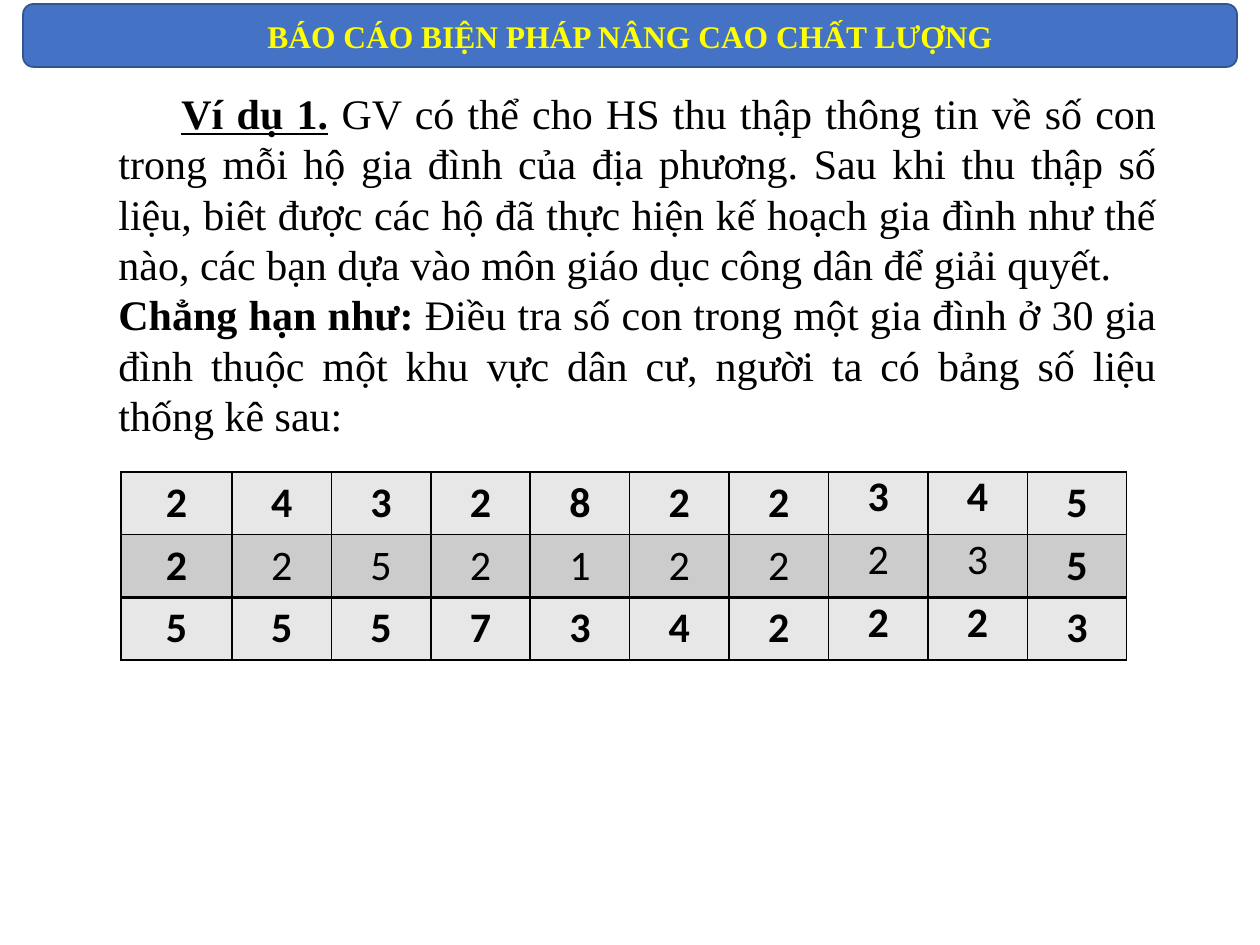
import pptx
import pptx.util
import pptx.dml.color
import pptx.enum.shapes
import pptx.enum.text
import pptx.oxml

theme = {
    "blue": "4472C4", "edge": "325491", "gold": "FFFF00", "ink": "000000",
    "light": "E7E7E7", "dark": "CCCCCC",
    "serif": "Times New Roman", "sans": "Calibri",
    "head": 18, "body": 24,
}
color = pptx.dml.color.RGBColor.from_string
align = pptx.enum.text.PP_ALIGN
anchor = pptx.enum.text.MSO_ANCHOR


def px(n):
    return pptx.util.Emu(n * 914400 // 126)


def write(para, text, size, face, ink, bold=False, under=False):
    run = para.add_run()
    run.text = text
    font = run.font
    font.size = pptx.util.Pt(theme[size])
    font.name = theme[face]
    font.color.rgb = color(theme[ink])
    font.bold = bold
    font.underline = under


deck = pptx.Presentation()
deck.slide_width, deck.slide_height = px(1260), px(945)
slide = deck.slides.add_slide(deck.slide_layouts[6])

box = slide.shapes.add_textbox(px(106), px(81), px(1063), px(369))
frame = box.text_frame
frame.word_wrap = True
frame.auto_size = pptx.enum.text.MSO_AUTO_SIZE.SHAPE_TO_FIT_TEXT
story = [
    (63, "Ví dụ 1.", True, " GV có thể cho HS thu thập thông tin về số con trong mỗi hộ gia đình của địa phương. Sau khi thu thập số liệu, biêt được các hộ đã thực hiện kế hoạch gia đình như thế nào, các bạn dựa vào môn giáo dục công dân để giải quyết. "),
    (0, "Chẳng hạn như: ", False, "Điều tra số con trong một gia đình ở 30 gia đình thuộc một khu vực dân cư, người ta có bảng số liệu thống kê sau: "),
]
for i, (indent, lead, under, rest) in enumerate(story):
    para = frame.add_paragraph() if i else frame.paragraphs[0]
    para.alignment = align.JUSTIFY
    para._p.get_or_add_pPr().set("indent", str(px(indent)))
    write(para, lead, "body", "serif", "ink", True, under)
    write(para, rest, "body", "serif", "ink")

counts = ["2432822345", "2252122235", "5557342223"]
table = slide.shapes.add_table(3, 10, px(121), px(472), px(1006), px(188)).table
for c, col in enumerate(table.columns):
    col.width = px(895) // 9 if c else px(111)
for r, digits in enumerate(counts):
    table.rows[r].height = px(188) // 3
    for c, digit in enumerate(digits):
        cell = table.cell(r, c)
        cell.margin_left = cell.margin_right = px(9)
        cell.margin_top = cell.margin_bottom = 0
        cell.vertical_anchor = anchor.TOP if c in (7, 8) else anchor.MIDDLE
        props = cell._tc.get_or_add_tcPr()
        for side in "LRTB":
            width = pptx.util.Pt(2 if r == 2 and side == "T" else 1)
            props.append(pptx.oxml.parse_xml(
                f'<a:ln{side} xmlns:a="http://schemas.openxmlformats.org/drawingml/2006/main" w="{width}">'
                f'<a:solidFill><a:srgbClr val="{theme["ink"]}"/></a:solidFill></a:ln{side}>'))
        cell.fill.solid()
        cell.fill.fore_color.rgb = color(theme["dark" if r == 1 else "light"])
        para = cell.text_frame.paragraphs[0]
        para.alignment = align.CENTER
        write(para, digit, "body", "sans", "ink", r != 1 or c in (0, 9))

round_rect = pptx.enum.shapes.MSO_SHAPE.ROUNDED_RECTANGLE
banner = slide.shapes.add_shape(round_rect, px(23), px(4), px(1214), px(63))
banner.shadow.inherit = False
banner.fill.solid()
banner.fill.fore_color.rgb = color(theme["blue"])
banner.line.color.rgb = color(theme["edge"])
banner.line.width = pptx.util.Pt(1)
banner.text_frame.word_wrap = True
banner.text_frame.vertical_anchor = anchor.MIDDLE
para = banner.text_frame.paragraphs[0]
para.alignment = align.CENTER
write(para, "BÁO CÁO BIỆN PHÁP NÂNG CAO CHẤT LƯỢNG", "head", "serif", "gold", True)

deck.save("out.pptx")
